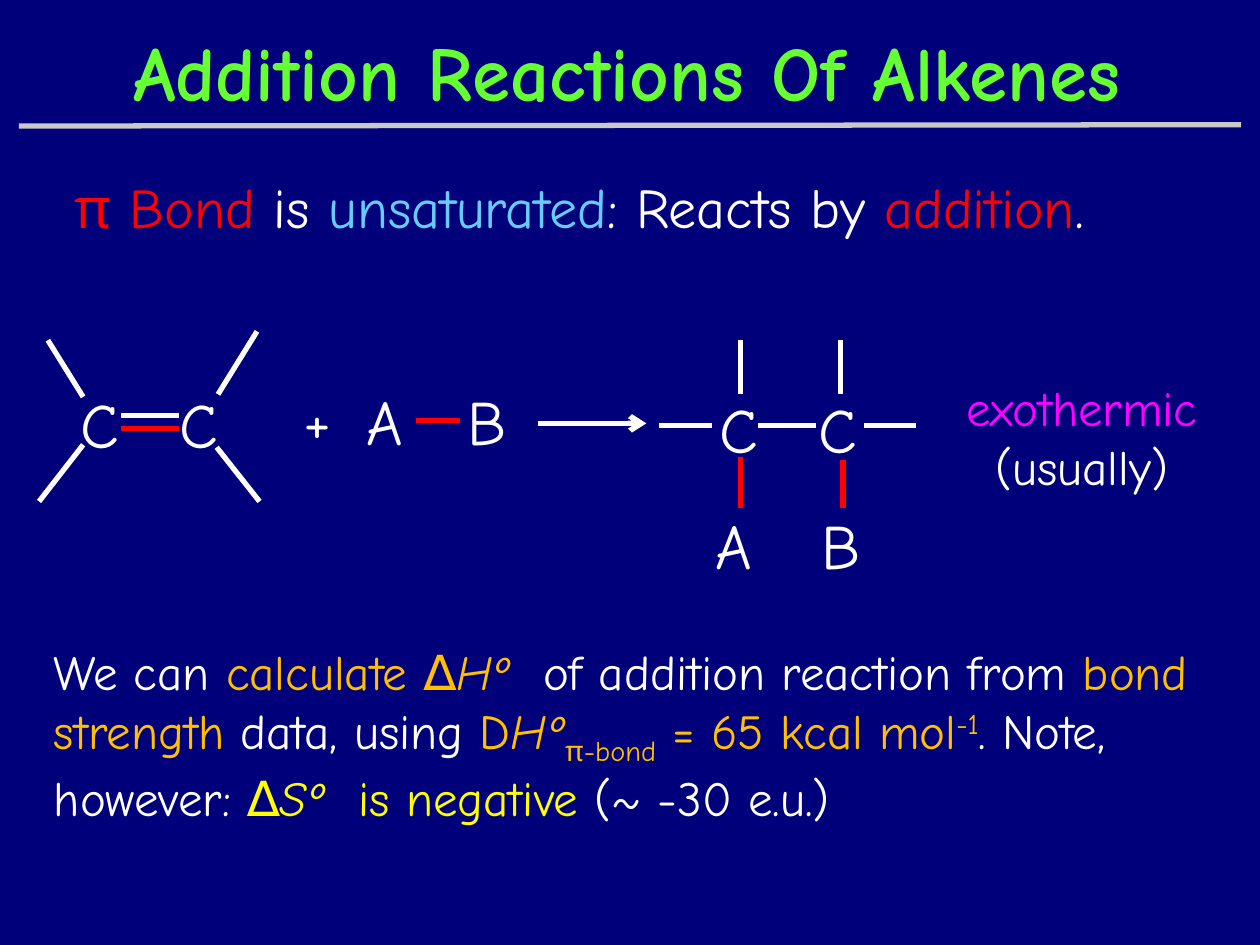
from lxml import etree
from pptx import Presentation
from pptx.dml.color import RGBColor
from pptx.enum import shapes, text
from pptx.oxml.ns import qn
from pptx.util import Inches, Pt

FONT = "Comic Neue"
NAVY, WHITE, RED, GREEN = "00007A", "FFFFFF", "FF0000", "66FF33"
SKY, MAGENTA, GOLD, YELLOW, GRAY = "66CCFF", "FF00FF", "FFC000", "FFFF00", "C9C9C9"
ATOM_WIDTHS = {"C": 0.75, "A": 0.56, "B": 0.67, "+": 0.6}
CARBON_GAP = 0.79


def paint(color_format, hex_color):
    color_format.rgb = RGBColor.from_string(hex_color)


def add_text(slide, left, top, width, height, size, runs, centered=False):
    box = slide.shapes.add_textbox(Inches(left), Inches(top), Inches(width), Inches(height))
    frame = box.text_frame
    frame.word_wrap = True
    frame.auto_size = text.MSO_AUTO_SIZE.SHAPE_TO_FIT_TEXT
    paragraph = frame.paragraphs[0]
    paragraph.alignment = text.PP_ALIGN.CENTER if centered else text.PP_ALIGN.LEFT
    for wording, color, *style in runs:
        run = paragraph.add_run()
        run.text = wording
        run.font.name = FONT
        run.font.size = Pt(size)
        run.font.bold = "bold" in style
        run.font.italic = "italic" in style
        paint(run.font.color, color)
        for name, percent in (("sub", -25), ("super", 30)):
            if name in style:
                run._r.get_or_add_rPr().set("baseline", str(percent * 1000))
    return frame


def add_atom(slide, symbol, left, top):
    add_text(slide, left, top, ATOM_WIDTHS[symbol], 0.7, 36, [(symbol, WHITE)])


def add_line(slide, x1, y1, x2, y2, color=WHITE, arrow=False):
    line = slide.shapes.add_connector(
        shapes.MSO_CONNECTOR.STRAIGHT, Inches(x1), Inches(y1), Inches(x2), Inches(y2))
    line.line.width = Pt(3)
    paint(line.line.color, color)
    if arrow:
        etree.SubElement(line.line._get_or_add_ln(), qn("a:tailEnd"), type="arrow")
    etree.SubElement(line._element.spPr, qn("a:effectLst"))


def add_heading(slide):
    title = add_text(slide, 0.08, 0.1, 9.79, 0.92, 44,
                     [("Addition Reactions Of Alkenes", GREEN, "bold")], centered=True)
    title.auto_size = text.MSO_AUTO_SIZE.NONE
    title.vertical_anchor = text.MSO_ANCHOR.MIDDLE
    add_line(slide, 0.15, 1, 9.85, 0.99, GRAY)
    add_text(slide, 0.49, 1.32, 9.03, 0.64, 32, [
        ("π Bond", RED), (" is ", WHITE), ("unsaturated", SKY),
        (": Reacts by ", WHITE), ("addition", RED), (".", WHITE)])


def add_alkene(slide):
    for left in (0.54, 0.54 + CARBON_GAP):
        add_atom(slide, "C", left, 3.01)
    for y, color in ((3.3, WHITE), (3.4, RED)):
        add_line(slide, 0.96, y, 1.42, y, color)
    for bond in ((1.73, 3.13, 2.04, 2.63), (1.72, 3.55, 2.06, 3.98),
                 (0.66, 3.15, 0.38, 2.7), (0.66, 3.53, 0.31, 3.98)):
        add_line(slide, *bond)


def add_reagent(slide):
    add_atom(slide, "+", 2.31, 2.97)
    add_atom(slide, "A", 2.81, 2.99)
    add_atom(slide, "B", 3.61, 2.99)
    add_line(slide, 3.3, 3.34, 3.65, 3.34, RED)
    add_line(slide, 4.27, 3.36, 5.13, 3.36, arrow=True)


def add_product(slide):
    for left in (5.61, 5.61 + CARBON_GAP):
        add_atom(slide, "C", left, 3.05)
    for start, end in ((6.02, 6.48), (6.86, 7.27), (5.65, 5.23)):
        add_line(slide, start, 3.38, end, 3.38)
    for x in (5.88, 5.88 + CARBON_GAP):
        add_line(slide, x, 2.7, x, 3.13)
    for symbol, left, x, bond_top in (("A", 5.58, 5.88, 3.63), ("B", 6.42, 6.69, 3.65)):
        add_line(slide, x, bond_top, x, 4.03, RED)
        add_atom(slide, symbol, left, 3.97)


def add_energetics(slide):
    add_text(slide, 7.44, 2.95, 2.29, 1.03, 28,
             [("exothermic", MAGENTA), (" (usually)", WHITE)], centered=True)
    add_text(slide, 0.33, 5.04, 9.54, 1.51, 28, [
        ("We can ", WHITE), ("calculate ∆", GOLD), ("Hº  ", GOLD, "italic"),
        ("of addition reaction from ", WHITE), ("bond strength ", GOLD),
        ("data, using ", WHITE), ("D", GOLD), ("Hº", GOLD, "italic"),
        ("π-bond", GOLD, "sub"), (" = 65 kcal mol", GOLD), ("-1", GOLD, "super"),
        (". Note, however: ", WHITE), ("∆", YELLOW), ("Sº", YELLOW, "italic"),
        ("  is negative ", YELLOW), ("(~ -30 e.u.)", WHITE)])


def main():
    deck = Presentation()
    deck.slide_width, deck.slide_height = Inches(10), Inches(7.5)
    slide = deck.slides.add_slide(deck.slide_layouts[6])
    slide.background.fill.solid()
    paint(slide.background.fill.fore_color, NAVY)
    add_heading(slide)
    add_alkene(slide)
    add_reagent(slide)
    add_product(slide)
    add_energetics(slide)
    deck.save("out.pptx")


if __name__ == "__main__":
    main()
